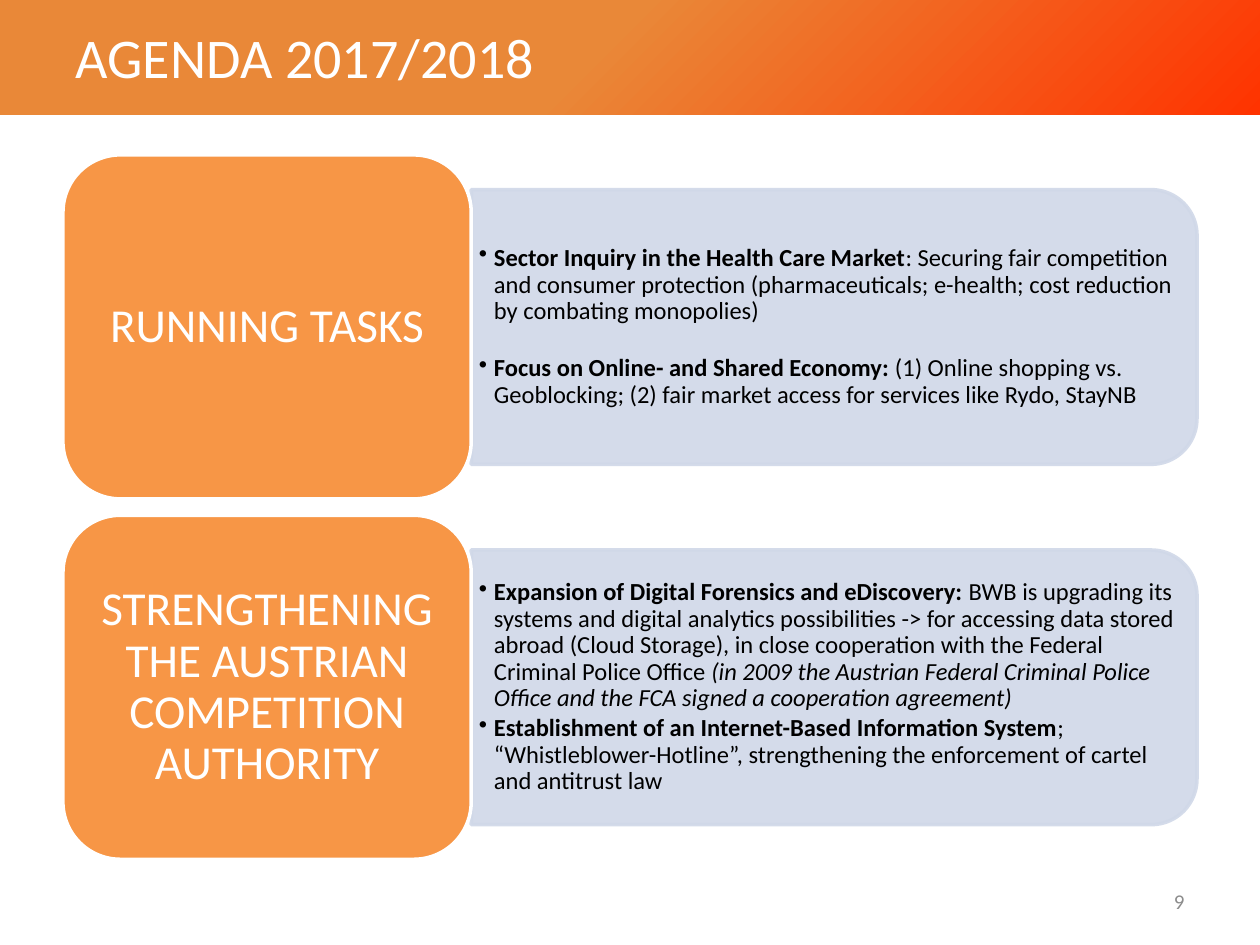
from lxml import etree
from pptx import Presentation
from pptx.dml.color import RGBColor
from pptx.enum.shapes import MSO_SHAPE
from pptx.enum.text import MSO_ANCHOR, PP_ALIGN
from pptx.oxml.ns import qn
from pptx.util import Inches, Pt

RECT = MSO_SHAPE.RECTANGLE
ROUNDED = MSO_SHAPE.ROUNDED_RECTANGLE
TOP_ROUNDED = MSO_SHAPE.ROUND_2_SAME_RECTANGLE
MIDDLE = MSO_ANCHOR.MIDDLE
LEFT, CENTER, RIGHT = PP_ALIGN.LEFT, PP_ALIGN.CENTER, PP_ALIGN.RIGHT

COLORS = {
    "orange": "F79646", "panel": "D0D8E8", "white": "FFFFFF", "black": "000000",
    "grey": "8C8C8C", "header_red": "FF3300", "header_orange": "E98838",
}
FONT = "Calibri"

# Tile label, then bullets as (space after in points, runs of (text, style))
SECTIONS = [
    ("RUNNING TASKS", [
        (17.5, [("Sector Inquiry in the Health Care Market", "bold"),
                (": Securing fair competition and consumer protection (pharmaceuticals; "
                 "e-health; cost reduction by combating monopolies)", "plain")]),
        (2, [("Focus on Online- and Shared Economy:", "bold"),
             (" (1) Online shopping vs. Geoblocking; (2) fair market access for "
              "services like Rydo, StayNB", "plain")]),
    ]),
    ("STRENGTHENING THE AUSTRIAN COMPETITION AUTHORITY", [
        (2, [("Expansion of Digital Forensics and eDiscovery: ", "bold"),
             ("BWB is upgrading its systems and digital analytics possibilities -> for "
              "accessing data stored abroad (Cloud Storage), in close cooperation with "
              "the Federal Criminal Police Office ", "plain"),
             ("(in 2009 the Austrian Federal Criminal Police Office and the FCA signed "
              "a cooperation agreement)", "italic")]),
        (2, [("Establishment of an Internet-Based Information System", "bold"),
             ("; “Whistleblower-Hotline”, strengthening the enforcement of cartel and "
              "antitrust law", "plain")]),
    ]),
]


def set_frame(shape, side, top):
    frame = shape.text_frame
    frame.word_wrap = True
    frame.vertical_anchor = MIDDLE
    frame.margin_left = frame.margin_right = Inches(side)
    frame.margin_top = frame.margin_bottom = Inches(top)
    return frame


def add_run(paragraph, text, size, color, style="plain"):
    run = paragraph.add_run()
    run.text = text
    run.font.name = FONT
    run.font.size = Pt(size)
    run.font.bold = style == "bold"
    run.font.italic = style == "italic"
    run.font.color.rgb = RGBColor.from_string(COLORS[color])


prs = Presentation()
prs.slide_width, prs.slide_height = Inches(10), Inches(7.5)
slide = prs.slides.add_slide(prs.slide_layouts[6])
shapes = slide.shapes

# Agenda sections: panel, bullets, tile
TILE_LEFT, TILE_WIDTH, TILE_HEIGHT = 0.5, 3.24, 2.73
FIRST_TOP, PITCH = 1.23, 2.86
PANEL_WIDTH, PANEL_HEIGHT = 5.76, 2.18
BULLETS_WIDTH, BULLETS_HEIGHT = 5.65, 1.97
panel_left = TILE_LEFT + TILE_WIDTH

for index, (label, bullets) in enumerate(SECTIONS):
    tile_top = FIRST_TOP + index * PITCH
    middle = tile_top + TILE_HEIGHT / 2

    # The panel is turned so that its rounded side faces right
    panel = shapes.add_shape(
        TOP_ROUNDED,
        Inches(panel_left + (PANEL_WIDTH - PANEL_HEIGHT) / 2),
        Inches(middle - PANEL_WIDTH / 2),
        Inches(PANEL_HEIGHT), Inches(PANEL_WIDTH))
    panel.rotation = 90
    panel.shadow.inherit = False
    panel.fill.solid()
    panel.fill.fore_color.rgb = RGBColor.from_string(COLORS["panel"])
    panel.line.color.rgb = RGBColor.from_string(COLORS["panel"])
    panel.line.width = Pt(2)
    for color_element in panel.element.spPr.iter(qn("a:srgbClr")):
        etree.SubElement(color_element, qn("a:alpha")).set("val", "90000")

    bullet_box = shapes.add_textbox(
        Inches(panel_left), Inches(middle - BULLETS_HEIGHT / 2),
        Inches(BULLETS_WIDTH), Inches(BULLETS_HEIGHT))
    bullet_frame = set_frame(bullet_box, 0.06, 0.03)
    for number, (space_after, runs) in enumerate(bullets):
        bullet = bullet_frame.add_paragraph() if number else bullet_frame.paragraphs[0]
        bullet.alignment = LEFT
        bullet.line_spacing = 0.9
        bullet.space_after = Pt(space_after)
        properties = bullet._p.get_or_add_pPr()
        properties.set("marL", str(Inches(0.12)))
        properties.set("indent", str(Inches(-0.12)))
        etree.SubElement(properties, qn("a:buChar")).set("char", "•")
        for text, style in runs:
            add_run(bullet, text, 14, "black", style)

    tile = shapes.add_shape(ROUNDED, Inches(TILE_LEFT), Inches(tile_top),
                            Inches(TILE_WIDTH), Inches(TILE_HEIGHT))
    tile.shadow.inherit = False
    tile.fill.solid()
    tile.fill.fore_color.rgb = RGBColor.from_string(COLORS["orange"])
    tile.line.color.rgb = RGBColor.from_string(COLORS["white"])
    tile.line.width = Pt(2)
    tile_label = set_frame(tile, 0.11, 0.06).paragraphs[0]
    tile_label.alignment = CENTER
    tile_label.line_spacing = 0.9
    add_run(tile_label, label, 27, "white")

# Header band with a gradient spreading from its lower right corner
header = shapes.add_shape(RECT, Inches(0), Inches(-0.02), Inches(10.01), Inches(0.93))
header.shadow.inherit = False
header.line.fill.background()
header.fill.gradient()
gradient = header.element.spPr.find(qn("a:gradFill"))
for child in list(gradient):
    gradient.remove(child)
stops = etree.SubElement(gradient, qn("a:gsLst"))
for position, color in [(0, "header_red"), (53, "header_orange"), (100, "header_orange")]:
    stop = etree.SubElement(stops, qn("a:gs"))
    stop.set("pos", str(position * 1000))
    etree.SubElement(stop, qn("a:srgbClr")).set("val", COLORS[color])
circle = etree.SubElement(gradient, qn("a:path"))
circle.set("path", "circle")
focus = etree.SubElement(circle, qn("a:fillToRect"))
focus.set("l", "100000")
focus.set("t", "100000")

title = set_frame(header, 0.6, 0.05).paragraphs[0]
title.alignment = LEFT
add_run(title, "AGENDA 2017/2018", 32, "white")

# Page number
page_box = shapes.add_textbox(Inches(7.17), Inches(6.95), Inches(2.33), Inches(0.4))
page_number = set_frame(page_box, 0.1, 0.05).paragraphs[0]
page_number.alignment = RIGHT
add_run(page_number, "9", 12, "grey")

prs.save("out.pptx")
